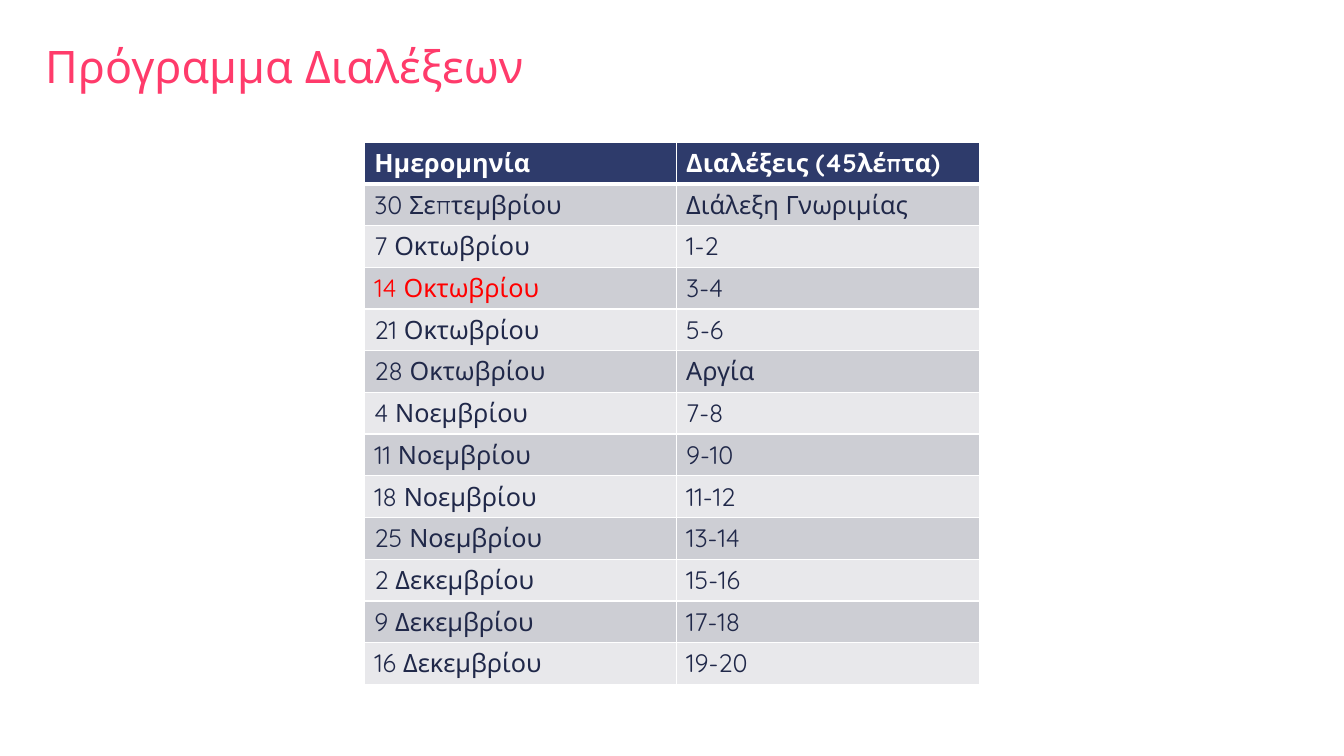
"""Build the lecture schedule slide."""
from dataclasses import dataclass
from lxml.etree import SubElement as Sub
from pptx import Presentation
from pptx.dml.color import RGBColor as Rgb
from pptx.enum.text import MSO_ANCHOR as Anchor
from pptx.oxml.ns import qn
from pptx.util import Pt


@dataclass(frozen=True)
class Theme:
    font: str = "Quicksand"
    pink: str = "FF3B6B"
    navy: str = "2E3B6B"
    ink: str = "202849"
    red: str = "FF0000"
    white: str = "FFFFFF"
    dark: str = "CDCED4"
    light: str = "E8E8EB"
    head: int = 32
    body: int = 18


theme = Theme()


def write(para, text, size, color, bold=False):
    run = para.add_run()
    run.text = text
    font = run.font
    font.name, font.size, font.bold = theme.font, Pt(size), bold
    font.color.rgb = Rgb.from_string(color)


def edge(cell, side, width):
    line = Sub(cell._tc.get_or_add_tcPr(), qn(f"a:ln{side}"), w=str(Pt(width)))
    fill = Sub(line, qn("a:solidFill"))
    Sub(fill, qn("a:srgbClr"), val=theme.white)


deck = Presentation()
deck.slide_width, deck.slide_height = Pt(960), Pt(540)
slide = deck.slides.add_slide(deck.slide_layouts[6])

title = slide.shapes.add_textbox(Pt(25.2), Pt(28.8), Pt(828), Pt(77))
title.text_frame.word_wrap = True
para = title.text_frame.paragraphs[0]
para.line_spacing = 0.9
write(para, "Πρόγραμμα Διαλέξεων", theme.head, theme.pink)

rows = [
    ("Ημερομηνία", "Διαλέξεις (45λέπτα)"),
    ("30 Σεπτεμβρίου", "Διάλεξη Γνωριμίας"),
    ("7 Οκτωβρίου", "1-2"),
    ("14 Οκτωβρίου", "3-4"),
    ("21 Οκτωβρίου", "5-6"),
    ("28 Οκτωβρίου", "Αργία"),
    ("4 Νοεμβρίου", "7-8"),
    ("11 Νοεμβρίου", "9-10"),
    ("18 Νοεμβρίου", "11-12"),
    ("25 Νοεμβρίου", "13-14"),
    ("2 Δεκεμβρίου", "15-16"),
    ("9 Δεκεμβρίου", "17-18"),
    ("16 Δεκεμβρίου", "19-20"),
]
widths = (222.8, 216.4)
high = 29.8
grid = slide.shapes.add_table(
    len(rows), len(widths), Pt(260.2), Pt(101.5), Pt(sum(widths)), Pt(high * len(rows))
).table
for col, width in zip(grid.columns, widths):
    col.width = Pt(width)

for r, texts in enumerate(rows):
    grid.rows[r].height = Pt(high)
    top = r == 0
    shade = theme.navy if top else theme.dark if r % 2 else theme.light
    for c, text in enumerate(texts):
        cell = grid.cell(r, c)
        cell.vertical_anchor = Anchor.TOP if top else Anchor.MIDDLE
        for side in "LRTB":
            thick = (top and side == "B") or (r == 1 and side == "T")
            edge(cell, side, 3 if thick else 1)
        cell.fill.solid()
        cell.fill.fore_color.rgb = Rgb.from_string(shade)
        color = theme.white if top else theme.red if text == "14 Οκτωβρίου" else theme.ink
        write(cell.text_frame.paragraphs[0], text, theme.body, color, top)

deck.save("out.pptx")
